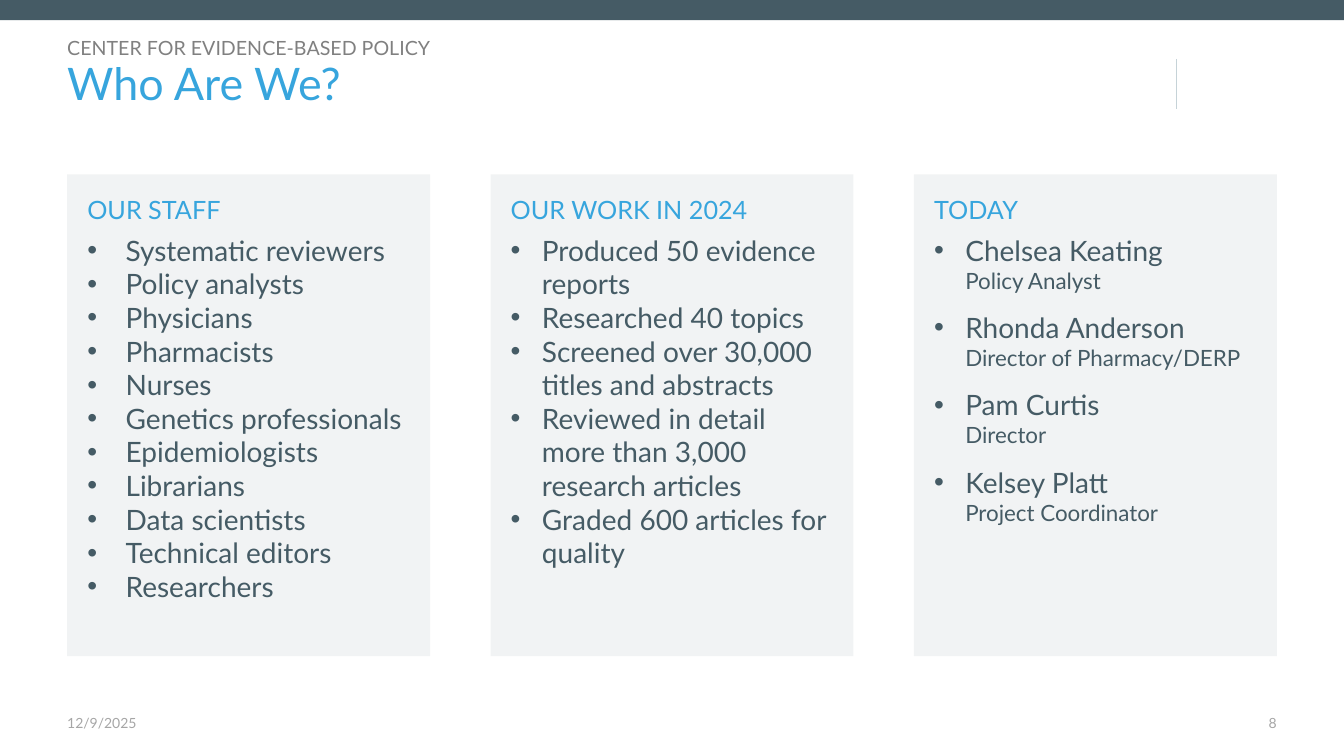
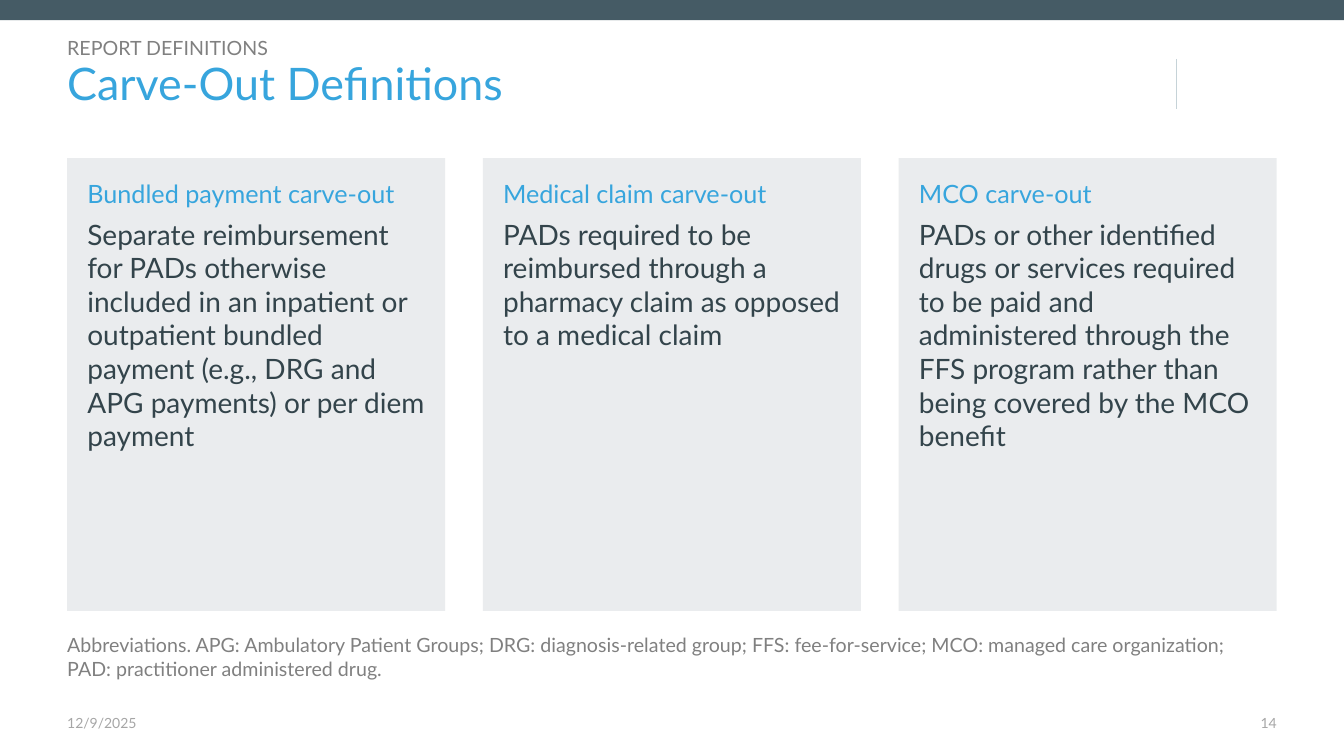
"""Build two policy-centre slides that share a header, a footer and a row of three cards."""
from dataclasses import dataclass
from typing import Optional

from lxml import etree
from pptx import Presentation
from pptx import util as u
from pptx.dml.color import RGBColor
from pptx.enum import shapes, text
from pptx.oxml import ns

FONT = "Lato"
SLATE = RGBColor(0x45, 0x5B, 0x65)
INK = RGBColor(0x33, 0x44, 0x4B)
BLUE = RGBColor(0x37, 0xA5, 0xDD)
GREY = RGBColor(0x80, 0x80, 0x80)
PALE = RGBColor(0xA6, 0xA6, 0xA6)
RULE = RGBColor(0xC6, 0xD3, 0xD8)

WIDTH, HEIGHT = u.Inches(13.33), u.Inches(7.5)
MARGIN, CONTENT = 5, 90
RULE_X = 87.5
CARD_INSET = 0.2


@dataclass(frozen=True)
class Box:
    """Position and size in percent of the slide."""
    left: float
    top: float
    width: float
    height: float

    def emu(self) -> tuple[int, int, int, int]:
        """Return left, top, width and height in EMU."""
        return across(self.left), down(self.top), across(self.width), down(self.height)


@dataclass(frozen=True)
class Line:
    """One paragraph, with its hanging indent in inches and spacing in points."""
    words: str
    size: float = 20
    color: RGBColor = SLATE
    indent: float = 0
    bullet: bool = False
    before: float = 0
    after: float = 0
    leading: Optional[float] = None
    align: text.PP_ALIGN = text.PP_ALIGN.LEFT


@dataclass(frozen=True)
class Card:
    """A heading with the lines below it."""
    heading: str
    lines: list[Line]


@dataclass(frozen=True)
class CardRow:
    """Shared geometry and tint of the cards; lengths and opacity in percent."""
    top: float
    width: float
    height: float
    opacity: int


@dataclass(frozen=True)
class Page:
    """Content of one slide."""
    kicker: str
    title: str
    number: int
    row: CardRow
    cards: list[Card]
    note: str = ""


def across(share: float) -> int:
    """Turn a percentage of the slide width into EMU."""
    return round(WIDTH * share / 100)


def down(share: float) -> int:
    """Turn a percentage of the slide height into EMU."""
    return round(HEIGHT * share / 100)


def bullets(items: list[str], indent: float) -> list[Line]:
    """Make a plain bulleted list."""
    return [Line(item, indent=indent, bullet=True) for item in items]


def people(entries: list[tuple[str, str]]) -> list[Line]:
    """Make a bulleted name with the role below it for each person."""
    lines = []
    for i, (name, role) in enumerate(entries):
        lines.append(Line(name, indent=0.31, bullet=True, before=12 if i else 0))
        lines.append(Line(role, size=16, indent=0.31))
    return lines


def write(sp, lines: list[Line], insets: tuple[float, float, float, float],
          anchor: text.MSO_ANCHOR = text.MSO_ANCHOR.TOP) -> None:
    """Fill a shape with paragraphs; insets are left, top, right, bottom in inches."""
    tf = sp.text_frame
    tf.word_wrap = True
    tf.vertical_anchor = anchor
    tf.margin_left, tf.margin_top, tf.margin_right, tf.margin_bottom = map(u.Inches, insets)
    for i, line in enumerate(lines):
        p = tf.add_paragraph() if i else tf.paragraphs[0]
        p.alignment = line.align
        p.space_before, p.space_after = u.Pt(line.before), u.Pt(line.after)
        if line.leading:
            p.line_spacing = line.leading
        if line.indent:
            props = p._p.get_or_add_pPr()
            props.set("marL", str(u.Inches(line.indent)))
            if line.bullet:
                props.set("indent", str(-u.Inches(line.indent)))
                etree.SubElement(props, ns.qn("a:buFont"), typeface="Arial")
                etree.SubElement(props, ns.qn("a:buChar"), char="•")
        r = p.add_run()
        r.text = line.words
        r.font.name, r.font.size = FONT, u.Pt(line.size)
        r.font.color.rgb = line.color


def add_text(s, box: Box, line: Line, top: float = 0, bottom: float = 0,
             anchor: text.MSO_ANCHOR = text.MSO_ANCHOR.TOP) -> None:
    """Add a text box of one paragraph without side insets."""
    write(s.shapes.add_textbox(*box.emu()), [line], (0, top, 0, bottom), anchor)


def add_panel(s, box: Box, opacity: int = 100):
    """Add a slate rectangle without outline, at the given opacity."""
    sp = s.shapes.add_shape(shapes.MSO_SHAPE.RECTANGLE, *box.emu())
    sp.shadow.inherit = False
    sp.fill.solid()
    sp.fill.fore_color.rgb = SLATE
    sp.line.fill.background()
    if opacity < 100:
        tint = sp._element.spPr.find(".//" + ns.qn("a:srgbClr"))
        etree.SubElement(tint, ns.qn("a:alpha"), val=str(opacity * 1000))
    return sp


def add_frame(s, page: Page) -> None:
    """Draw the band, rule, titles and footer."""
    add_panel(s, Box(0, 0, 100, 2.67))
    rule = s.shapes.add_connector(shapes.MSO_CONNECTOR.STRAIGHT,
                                  across(RULE_X), down(7.8), across(RULE_X), down(14.4))
    rule.line.color.rgb, rule.line.width = RULE, u.Pt(0.25)
    etree.SubElement(rule._element.spPr, ns.qn("a:effectLst"))
    middle = text.MSO_ANCHOR.MIDDLE
    add_text(s, Box(MARGIN, 7.87, 78.75, 6.67),
             Line(page.title, 32, BLUE, leading=0.9), 0.07, 0.05, middle)
    add_text(s, Box(MARGIN, 4.67, 38.65, 2.93),
             Line(page.kicker, 14, GREY, leading=1.08), 0.05, 0.05, middle)
    add_text(s, Box(MARGIN, 94.53, 15, 2.93), Line("12/9/2025", 10, PALE))
    add_text(s, Box(RULE_X, 94.53, MARGIN + CONTENT - RULE_X, 2.93),
             Line(str(page.number), 10, PALE, align=text.PP_ALIGN.RIGHT))


def add_cards(s, row: CardRow, cards: list[Card]) -> None:
    """Spread the cards evenly over the content width."""
    step = (CONTENT - row.width) / (len(cards) - 1)
    for i, card in enumerate(cards):
        sp = add_panel(s, Box(MARGIN + i * step, row.top, row.width, row.height), row.opacity)
        write(sp, [Line(card.heading, 18, BLUE, after=6), *card.lines], (CARD_INSET,) * 4)


PAGES = [
    Page("CENTER FOR EVIDENCE-BASED POLICY", "Who Are We?", 8, CardRow(23.07, 27, 63.73, 7), [
        Card("OUR STAFF", bullets([
            "Systematic reviewers", "Policy analysts", "Physicians", "Pharmacists", "Nurses",
            "Genetics professionals", "Epidemiologists", "Librarians", "Data scientists",
            "Technical editors", "Researchers"], 0.38)),
        Card("OUR WORK IN 2024", bullets([
            "Produced 50 evidence reports",
            "Researched 40 topics",
            "Screened over 30,000 titles and abstracts",
            "Reviewed in detail more than 3,000 research articles",
            "Graded 600 articles for quality"], 0.31)),
        Card("TODAY", people([
            ("Chelsea Keating", "Policy Analyst"),
            ("Rhonda Anderson", "Director of Pharmacy/DERP"),
            ("Pam Curtis", "Director"),
            ("Kelsey Platt", "Project Coordinator")])),
    ]),
    Page("REPORT DEFINITIONS", "Carve-Out Definitions", 14, CardRow(20.93, 28.13, 59.87, 11), [
        Card("Bundled payment carve-out", [Line(
            "Separate reimbursement for PADs otherwise included in an inpatient or outpatient "
            "bundled payment (e.g., DRG and APG payments) or per diem payment", color=INK)]),
        Card("Medical claim carve-out", [Line(
            "PADs required to be reimbursed through a pharmacy claim as opposed to a medical "
            "claim", color=INK)]),
        Card("MCO carve-out", [Line(
            "PADs or other identified drugs or services required to be paid and administered "
            "through the FFS program rather than being covered by the MCO benefit", color=INK)]),
    ], "Abbreviations. APG: Ambulatory Patient Groups; DRG: diagnosis-related group; "
       "FFS: fee-for-service; MCO: managed care organization; "
       "PAD: practitioner administered drug."),
]


def main() -> None:
    """Build and save the presentation."""
    prs = Presentation()
    prs.slide_width, prs.slide_height = WIDTH, HEIGHT
    for page in PAGES:
        s = prs.slides.add_slide(prs.slide_layouts[6])
        add_frame(s, page)
        add_cards(s, page.row, page.cards)
        if page.note:
            add_text(s, Box(MARGIN, 83.07, 87.9, 7.6), Line(page.note, 14, GREY), 0.05, 0.05)
    prs.save("out.pptx")


if __name__ == "__main__":
    main()
